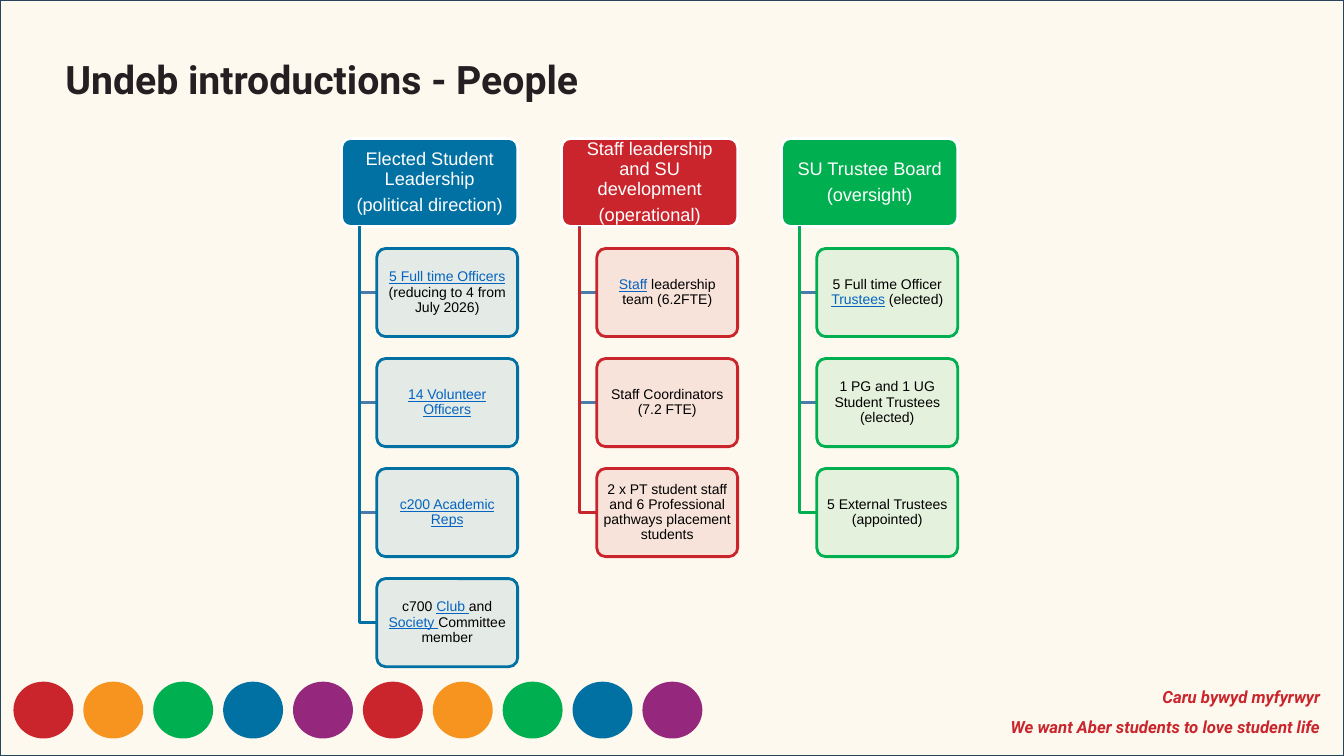
import lxml.etree
import pptx
import pptx.dml.color
import pptx.enum.shapes
import pptx.enum.text
import pptx.oxml.ns
import pptx.util

Pt = pptx.util.Pt
RGBColor = pptx.dml.color.RGBColor
SHAPE = pptx.enum.shapes.MSO_SHAPE
ALIGN = pptx.enum.text.PP_ALIGN
ANCHOR = pptx.enum.text.MSO_ANCHOR

RED = RGBColor(0xCA, 0x25, 0x2C)
ORANGE = RGBColor(0xF7, 0x94, 0x1F)
GREEN = RGBColor(0x00, 0xAF, 0x50)
BLUE = RGBColor(0x01, 0x71, 0xA3)
PURPLE = RGBColor(0x95, 0x27, 0x7D)
CREAM = RGBColor(0xFE, 0xEE, 0xCE)
NAVY = RGBColor(0x28, 0x44, 0x5D)
BRANCH = RGBColor(0x49, 0x7C, 0xAB)
LINK = RGBColor(0x05, 0x63, 0xC1)
INK = RGBColor(0x24, 0x20, 0x21)
BLACK = RGBColor(0, 0, 0)
WHITE = RGBColor(0xFF, 0xFF, 0xFF)

TITLE = "Undeb introductions - People"
MOTTO = ["Caru bywyd myfyrwyr", "We want Aber students to love student life"]
DOT_COLOURS = [RED, ORANGE, GREEN, BLUE, PURPLE] * 2

# Each member is a list of (text, is_link) spans.
TEAMS = [
    (BLUE, ["Elected Student Leadership", "(political direction)"], [
        [("5 Full time Officers ", True), ("(reducing to 4 from July 2026)", False)],
        [("14 Volunteer Officers", True)],
        [("c200 Academic Reps", True)],
        [("c700 ", False), ("Club ", True), ("and ", False), ("Society ", True),
         ("Committee member", False)],
    ]),
    (RED, ["Staff leadership and SU development", "(operational)"], [
        [("Staff", True), (" leadership team (6.2FTE)", False)],
        [("Staff Coordinators (7.2 FTE)", False)],
        [("2 x PT student staff and 6 Professional pathways placement students", False)],
    ]),
    (GREEN, ["SU Trustee Board", "(oversight)"], [
        [("5 Full time Officer ", False), ("Trustees", True), (" (elected)", False)],
        [("1 PG and 1 UG Student Trustees (elected)", False)],
        [("5 External Trustees (appointed)", False)],
    ]),
]

SLIDE_W, SLIDE_H = 960, 540
TEAM_LEFT, TEAM_TOP, TEAM_PITCH = 244, 98.9, 157.15
HEAD_W, BOX_H, ROW_PITCH = 125.8, 62.9, 78.6
SPINE_INDENT, MEMBER_INDENT = 12.58, 25.16
MEMBER_W = HEAD_W - MEMBER_INDENT
DOT_LEFT, DOT_TOP, DOT_W, DOT_H, DOT_PITCH = 10.1, 487.4, 41.8, 39.6, 49.92


def add_shape(slide, kind, left, top, width, height, fill, line, weight, opacity=None):
    """Add a flat preset shape; opacity is a percentage."""
    shape = slide.shapes.add_shape(kind, Pt(left), Pt(top), Pt(width), Pt(height))
    shape.shadow.inherit = False
    shape.fill.solid()
    shape.fill.fore_color.rgb = fill
    shape.line.color.rgb = line
    shape.line.width = Pt(weight)
    if opacity is not None:
        colour = shape.fill._xPr.find(".//" + pptx.oxml.ns.qn("a:srgbClr"))
        alpha = lxml.etree.SubElement(colour, pptx.oxml.ns.qn("a:alpha"))
        alpha.set("val", str(opacity * 1000))
    return shape


def set_margins(frame, side, top):
    frame.word_wrap = True
    frame.margin_left = frame.margin_right = Pt(side)
    frame.margin_top = frame.margin_bottom = Pt(top)


def add_span(para, text, font, size, colour, bold=False, italic=False, underline=False):
    span = para.add_run()
    span.text = text
    span.font.name = font
    span.font.size = Pt(size)
    span.font.color.rgb = colour
    span.font.bold, span.font.italic, span.font.underline = bold, italic, underline


def next_para(frame, index):
    return frame.paragraphs[0] if index == 0 else frame.add_paragraph()


def add_card(slide, left, top, width, fill, line, opacity, margin, size, paragraphs):
    """Add a rounded box with centred paragraphs of (text, colour, underline) spans."""
    card = add_shape(slide, SHAPE.ROUNDED_RECTANGLE, left, top, width, BOX_H,
                     fill, line, 2, opacity)
    card.adjustments[0] = 0.1
    frame = card.text_frame
    set_margins(frame, margin, 2.5)
    frame.vertical_anchor = ANCHOR.MIDDLE
    for index, spans in enumerate(paragraphs):
        para = next_para(frame, index)
        para.alignment = ALIGN.CENTER
        para.line_spacing = 0.9
        para.space_after = Pt(size * 0.35)
        for text, colour, underline in spans:
            add_span(para, text, "Arial", size, colour, underline=underline)


def add_branch(slide, left, top, right, bottom, colour):
    """Draw an elbow down from the header and across to a member."""
    builder = slide.shapes.build_freeform(Pt(left), Pt(top))
    builder.add_line_segments([(Pt(left), Pt(bottom)), (Pt(right), Pt(bottom))], close=False)
    branch = builder.convert_to_shape()
    branch.shadow.inherit = False
    branch.fill.background()
    branch.line.color.rgb = colour
    branch.line.width = Pt(2)


def add_team(slide, left, colour, heading, members):
    add_card(slide, left, TEAM_TOP, HEAD_W, colour, WHITE, None, 3.6, 13,
             [[(text, WHITE, False)] for text in heading])
    for row, member in enumerate(members, start=1):
        top = TEAM_TOP + row * ROW_PITCH
        is_last = row == len(members)
        add_branch(slide, left + SPINE_INDENT, TEAM_TOP + BOX_H, left + MEMBER_INDENT,
                   top + BOX_H / 2, colour if is_last else BRANCH)
        spans = [(text, LINK if is_link else BLACK, is_link) for text, is_link in member]
        add_card(slide, left + MEMBER_INDENT, top, MEMBER_W, colour, colour, 10, 3, 10, [spans])


def add_textbox(slide, left, top, width, height):
    frame = slide.shapes.add_textbox(Pt(left), Pt(top), Pt(width), Pt(height)).text_frame
    set_margins(frame, 7.2, 3.6)
    return frame


def main():
    deck = pptx.Presentation()
    deck.slide_width, deck.slide_height = Pt(SLIDE_W), Pt(SLIDE_H)
    page = deck.slides.add_slide(deck.slide_layouts[6])

    add_shape(page, SHAPE.RECTANGLE, 0, 0, SLIDE_W, SLIDE_H, CREAM, NAVY, 2, 33)

    motto = add_textbox(page, 480, 479.5, 470.2, 48.2)
    for index, text in enumerate(MOTTO):
        para = next_para(motto, index)
        para.alignment = ALIGN.RIGHT
        para.line_spacing = 1.5
        add_span(para, text, "Roboto", 12, RED, bold=True, italic=True)

    for index, colour in enumerate(DOT_COLOURS):
        add_shape(page, SHAPE.OVAL, DOT_LEFT + index * DOT_PITCH, DOT_TOP, DOT_W, DOT_H,
                  colour, colour, 1)

    for index, (colour, heading, members) in enumerate(TEAMS):
        add_team(page, TEAM_LEFT + index * TEAM_PITCH, colour, heading, members)

    title = add_textbox(page, 39.6, 36, 882, 41)
    add_span(title.paragraphs[0], TITLE, "Roboto", 28, INK, bold=True)

    deck.save("out.pptx")


if __name__ == "__main__":
    main()
